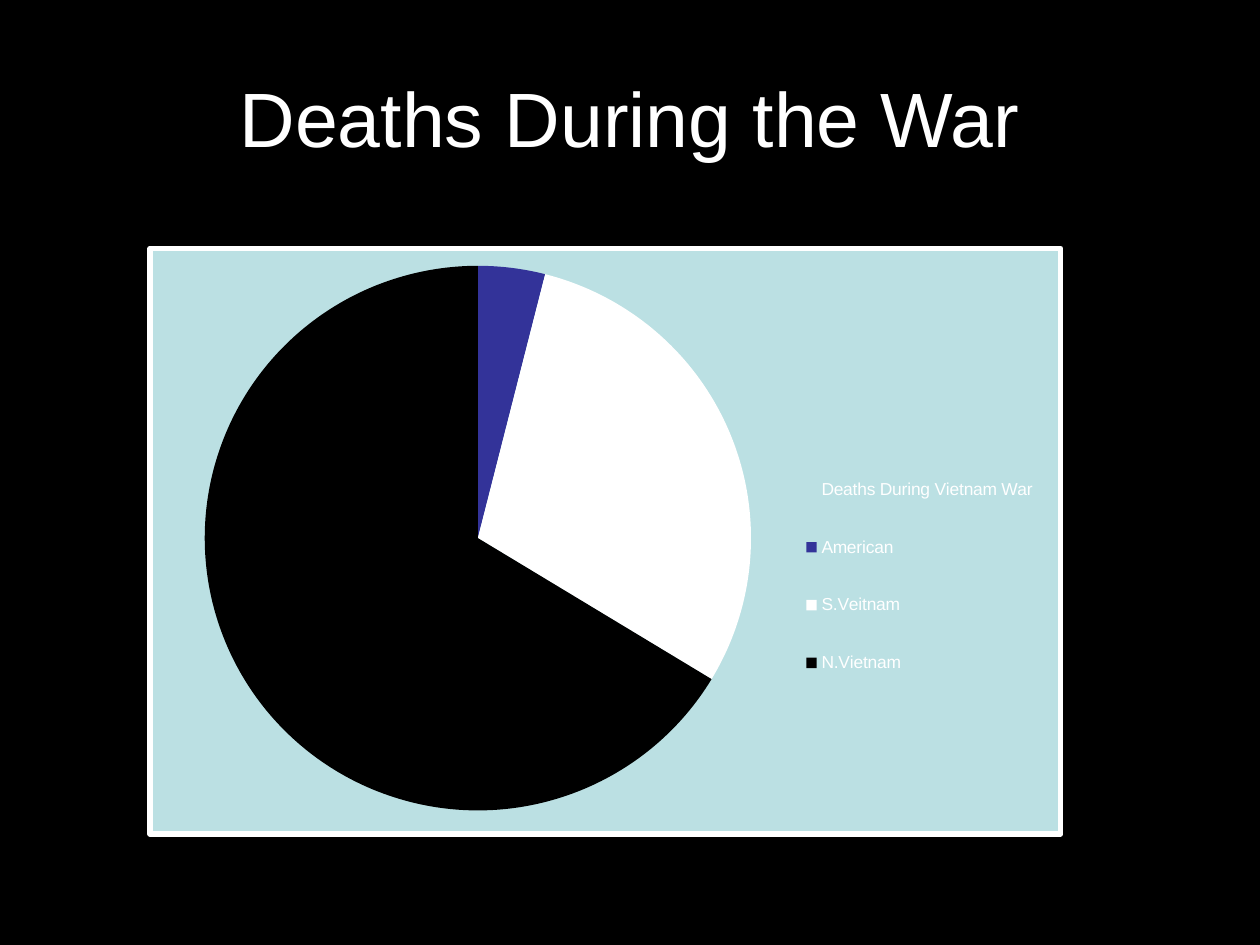
from pptx import Presentation
from pptx.chart.data import CategoryChartData
from pptx.dml.color import RGBColor
from pptx.enum.chart import XL_CHART_TYPE, XL_LEGEND_POSITION
from pptx.enum.text import MSO_ANCHOR, PP_ALIGN
from pptx.oxml import parse_xml
from pptx.oxml.ns import nsdecls, qn
from pptx.util import Pt

BLACK = RGBColor(0x00, 0x00, 0x00)
WHITE = RGBColor(0xFF, 0xFF, 0xFF)
PALE_TEAL = RGBColor(0xBB, 0xE0, 0xE3)
INDIGO = RGBColor(0x33, 0x33, 0x99)
FONT = "Arial"

# Legend label, value, slice colour
DEATHS = [
    ("Deaths During Vietnam War", None, PALE_TEAL),
    ("American", 4, INDIGO),
    ("S.Veitnam", 30, WHITE),
    ("N.Vietnam", 67, BLACK),
]


def format_font(font, size):
    for name, value in {"name": FONT, "size": Pt(size), "bold": False}.items():
        setattr(font, name, value)
    font.color.rgb = WHITE


def set_layout(element, index, box, inner=False):
    """Place a chart part by fractions of the chart's width and height."""
    for old in element.findall(qn("c:layout")):
        element.remove(old)
    target = '<c:layoutTarget val="inner"/>' if inner else ""
    modes = "".join(f'<c:{k}Mode val="edge"/>' for k in "xy")
    sizes = "".join(f'<c:{k} val="{v}"/>' for k, v in zip("xywh", box))
    element.insert(index, parse_xml(
        f'<c:layout {nsdecls("c")}><c:manualLayout>{target}{modes}{sizes}'
        "</c:manualLayout></c:layout>"))


def add_title(slide, text, left, top, width, height):
    sp = slide.shapes.title
    box = {"left": left, "top": top, "width": width, "height": height}
    for name, value in box.items():
        setattr(sp, name, Pt(value))
    tf = sp.text_frame
    tf.text = text
    tf.word_wrap = True
    tf.vertical_anchor = MSO_ANCHOR.MIDDLE
    p = tf.paragraphs[0]
    p.alignment = PP_ALIGN.CENTER
    format_font(p.runs[0].font, 44)


def add_deaths_pie(slide, left, top, width, height):
    data = CategoryChartData()
    data.categories = [label for label, _, _ in DEATHS]
    data.add_series("Series 1", [value for _, value, _ in DEATHS])
    chart = slide.shapes.add_chart(
        XL_CHART_TYPE.PIE, Pt(left), Pt(top), Pt(width), Pt(height), data).chart
    chart.has_title = False
    format_font(chart.font, 10)

    # Slices
    plot = chart.plots[0]
    plot.vary_by_categories = True
    for i, (_, _, color) in enumerate(DEATHS):
        fmt = plot.series[0].points[i].format
        fmt.fill.solid()
        fmt.fill.fore_color.rgb = color
        fmt.line.fill.background()

    # Legend
    chart.has_legend = True
    legend = chart.legend
    legend.position = XL_LEGEND_POSITION.RIGHT
    legend.include_in_layout = False
    format_font(legend.font, 10)

    # Positions of the pie and the legend
    root = chart.element
    plot_area = root.find(".//" + qn("c:plotArea"))
    set_layout(plot_area, 0, (0.06, 0.03, 0.6, 0.93), inner=True)
    set_layout(root.find(".//" + qn("c:legend")), 1, (0.71, 0.33, 0.27, 0.46))

    # Pale panel with a white border
    panel = parse_xml(
        f'<c:spPr {nsdecls("c", "a")}>'
        f'<a:solidFill><a:srgbClr val="{PALE_TEAL}"/></a:solidFill>'
        f'<a:ln w="{Pt(3)}"><a:solidFill><a:srgbClr val="{WHITE}"/></a:solidFill>'
        "</a:ln></c:spPr>")
    root.find(qn("c:txPr")).addprevious(panel)


def main():
    prs = Presentation()
    prs.slide_width, prs.slide_height = Pt(720), Pt(540)
    slide = prs.slides.add_slide(prs.slide_layouts[5])
    slide.background.fill.solid()
    slide.background.fill.fore_color.rgb = BLACK
    add_title(slide, "Deaths During the War", 36, 21.6, 648, 90)
    add_deaths_pie(slide, 84.24, 140.4, 523.44, 337.68)
    prs.save("out.pptx")


if __name__ == "__main__":
    main()
